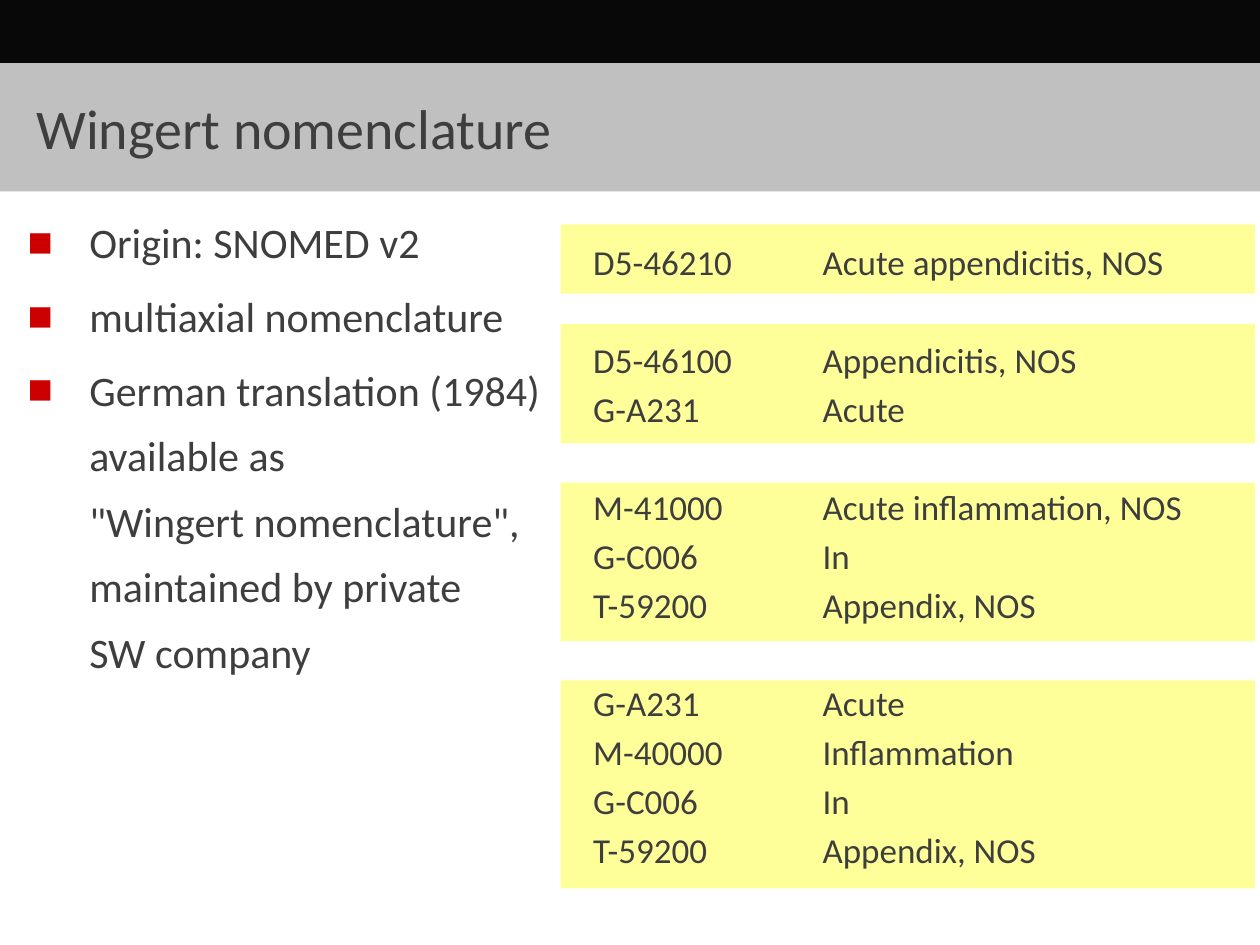
from dataclasses import dataclass

import pptx
import pptx.dml.color
import pptx.enum.shapes
import pptx.enum.text
import pptx.oxml
import pptx.oxml.ns
import pptx.util

COLUMNS, ROWS = 100, 75
CELL = pptx.util.Inches(0.1)
FONT = "Calibri"
INK, BLACK, GREY, YELLOW, RED = "3E3E3E", "080808", "C0C0C0", "FFFF99", "CC0000"
TEXT_INDENT = 4.9
TERM_TAB = 18.2
CODE_GAP = 4  # points between the entries of a group
GROUP_GAP = 32  # points between groups


@dataclass
class Area:
    """Place on the slide, in columns and rows of the grid."""
    left: float
    top: float
    width: float
    height: float

    def lengths(self) -> list[int]:
        return [cells(n) for n in (self.left, self.top, self.width, self.height)]


@dataclass
class CodeGroup:
    top: float
    height: float
    entries: list[tuple[str, str]]


POINTS = [
    "Origin: SNOMED v2",
    "multiaxial nomenclature",
    "German translation (1984)\vavailable as\v\"Wingert nomenclature\",\v"
    "maintained by private\vSW company",
]
GROUPS = [
    CodeGroup(17.8, 5.5, [("D5-46210", "Acute appendicitis, NOS")]),
    CodeGroup(25.7, 9.5, [("D5-46100", "Appendicitis, NOS"), ("G-A231", "Acute")]),
    CodeGroup(38.3, 12.6, [("M-41000", "Acute inflammation, NOS"),
                           ("G-C006", "In"), ("T-59200", "Appendix, NOS")]),
    CodeGroup(54, 16.5, [("G-A231", "Acute"), ("M-40000", "Inflammation"),
                         ("G-C006", "In"), ("T-59200", "Appendix, NOS")]),
]


def cells(count: float) -> int:
    return round(count * CELL)


def color(hex_code: str) -> pptx.dml.color.RGBColor:
    return pptx.dml.color.RGBColor.from_string(hex_code)


def add_panel(slide, area: Area, fill: str):
    panel = slide.shapes.add_shape(
        pptx.enum.shapes.MSO_SHAPE.RECTANGLE, *area.lengths())
    panel.shadow.inherit = False
    panel.fill.solid()
    panel.fill.fore_color.rgb = color(fill)
    panel.line.fill.background()
    return panel


def add_text_box(slide, area: Area):
    box = slide.shapes.add_textbox(*area.lengths())
    box.text_frame.word_wrap = True
    return box.text_frame


def add_property(para, xml: str) -> None:
    """Append one DrawingML element to the paragraph's properties."""
    tag, rest = xml.split(" ", 1)
    namespace = pptx.oxml.ns.nsdecls("a")
    para._p.get_or_add_pPr().append(
        pptx.oxml.parse_xml(f"<a:{tag} {namespace} {rest}"))


def style_runs(para, size: int) -> None:
    for run in para.runs:
        run.font.name = FONT
        run.font.size = pptx.util.Pt(size)
        run.font.color.rgb = color(INK)


def add_title(slide, title: str) -> None:
    band = add_panel(slide, Area(0, 5, COLUMNS, 10.2), GREY)
    band.text_frame.vertical_anchor = pptx.enum.text.MSO_ANCHOR.MIDDLE
    para = band.text_frame.paragraphs[0]
    para.text = title
    para.alignment = pptx.enum.text.PP_ALIGN.LEFT
    para._p.get_or_add_pPr().set("marL", str(cells(1.9)))
    style_runs(para, 32)


def add_points(slide, points: list[str]) -> None:
    frame = add_text_box(slide, Area(1.2, 15.5, 92.9, 56.7))
    for index, point in enumerate(points):
        para = frame.add_paragraph() if index else frame.paragraphs[0]
        para.text = point
        para.line_spacing = 1.3
        if index:
            para.space_before = pptx.util.Pt(4.8)
        properties = para._p.get_or_add_pPr()
        properties.set("marL", str(cells(TEXT_INDENT)))
        properties.set("indent", str(cells(-TEXT_INDENT)))
        add_property(para, f'buClr ><a:srgbClr val="{RED}"/></a:buClr>')
        add_property(para, 'buFont typeface="Arial"/>')
        add_property(para, 'buChar char="■"/>')
        style_runs(para, 24)


def add_codes(slide, groups: list[CodeGroup]) -> None:
    for group in groups:
        add_panel(slide, Area(44.5, group.top, 55.1, group.height), YELLOW)
    frame = add_text_box(slide, Area(46.1, 18.6, 53.5, 45))
    para = None
    for group in groups:
        for index, (code, term) in enumerate(group.entries):
            if para is None:
                para = frame.paragraphs[0]
            else:
                para = frame.add_paragraph()
                para.space_before = pptx.util.Pt(CODE_GAP if index else GROUP_GAP)
            para.text = f"{code}\t{term}"
            add_property(para, f'tabLst ><a:tab pos="{cells(TERM_TAB)}" algn="l"/></a:tabLst>')
            style_runs(para, 20)


def main() -> None:
    deck = pptx.Presentation()
    deck.slide_width, deck.slide_height = cells(COLUMNS), cells(ROWS)
    slide = deck.slides.add_slide(deck.slide_layouts[6])
    add_panel(slide, Area(0, 0, COLUMNS, 5), BLACK)
    add_title(slide, "Wingert nomenclature")
    add_points(slide, POINTS)
    add_codes(slide, GROUPS)
    deck.save("out.pptx")


if __name__ == "__main__":
    main()
